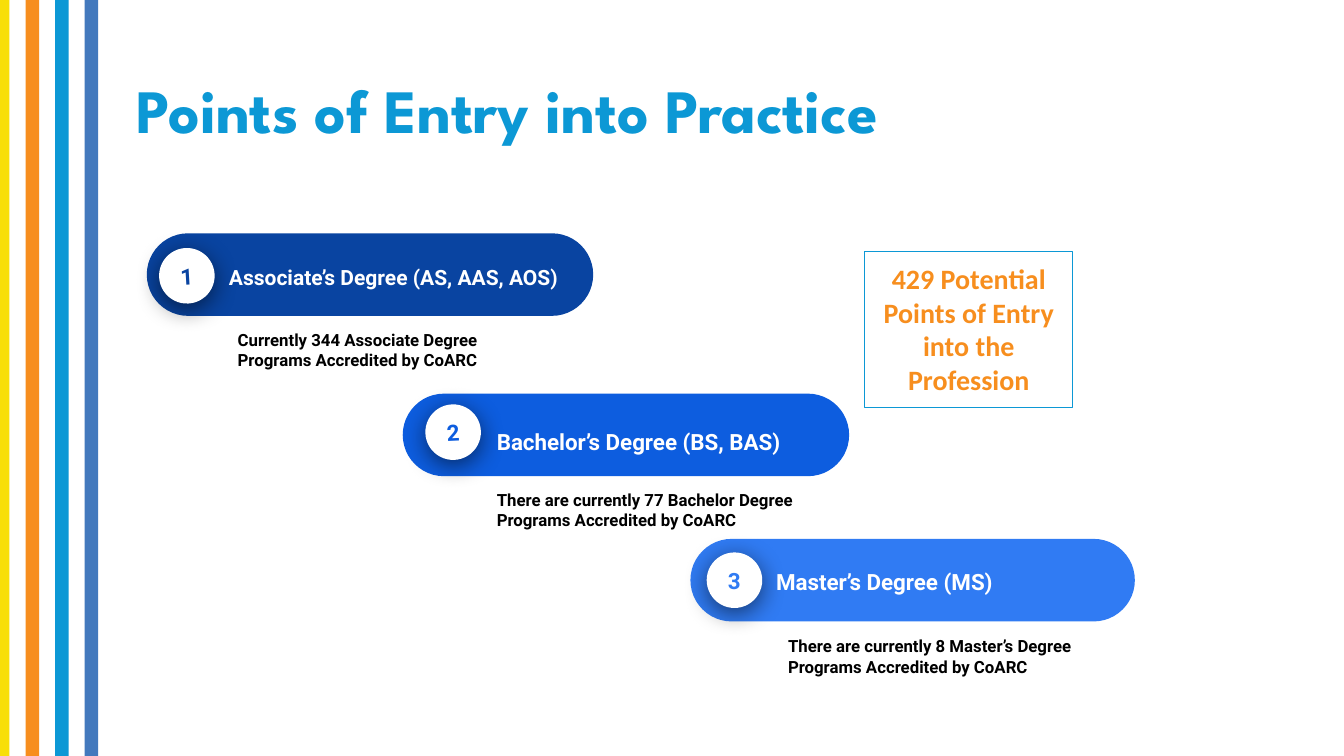
"""Build the slide on points of entry into practice."""
from lxml import etree
from pptx import Presentation
from pptx.dml.color import RGBColor
from pptx.enum.shapes import MSO_SHAPE
from pptx.enum.text import MSO_ANCHOR, PP_ALIGN
from pptx.oxml.ns import qn
from pptx.util import Cm, Pt

RECTANGLE, PILL, CIRCLE = MSO_SHAPE.RECTANGLE, MSO_SHAPE.ROUNDED_RECTANGLE, MSO_SHAPE.OVAL
TOP, MIDDLE = MSO_ANCHOR.TOP, MSO_ANCHOR.MIDDLE
LEFT, CENTER = PP_ALIGN.LEFT, PP_ALIGN.CENTER

COLORS = {
    "yellow": "F8DF08", "orange": "F78E1E", "sky": "0C98D5", "steel": "4379BD",
    "navy": "0944A1", "royal": "0D5DDF", "azure": "307BF3",
    "white": "FFFFFF", "black": "000000",
}
STRIPES = ["yellow", "orange", "sky", "steel"]
DEGREES = [
    {"color": "navy", "pill": (3.7, 5.88, 11.25, 2.08), "badge": (4.01, 6.25, 1.4, 1.4),
     "turn": -3.3, "label": (5.44, 6.2, 9.78, 1.45), "note": (5.66, 7.98, 8.15, 1.88),
     "name": "Associate’s Degree (AS, AAS, AOS)", "size": 15,
     "detail": "Currently 344 Associate Degree Programs Accredited by CoARC"},
    {"color": "royal", "pill": (10.15, 9.92, 11.25, 2.08), "badge": (10.72, 10.19, 1.4, 1.4),
     "turn": -2.6, "label": (12.19, 10.34, 8.64, 1.45), "note": (12.19, 12.01, 8.15, 1.88),
     "name": "Bachelor’s Degree (BS, BAS)", "size": 16,
     "detail": "There are currently 77 Bachelor Degree Programs Accredited by CoARC"},
    {"color": "azure", "pill": (17.4, 13.58, 11.2, 2.08), "badge": (17.81, 13.92, 1.4, 1.4),
     "turn": 0.2, "label": (19.23, 13.89, 8.64, 1.45), "note": (19.53, 15.7, 8.08, 1.88),
     "name": "Master’s Degree (MS)", "size": 16,
     "detail": "There are currently 8 Master’s Degree Programs Accredited by CoARC"},
]


def rgb(color):
    """Return the named colour."""
    return RGBColor.from_string(COLORS[color])


def set_all(target, values):
    """Set each named attribute on the target."""
    for name, value in values.items():
        setattr(target, name, value)


def write(box, text, size, color, font="Roboto", anchor=MIDDLE, align=LEFT,
          spacing=1.0, inset=(0.33, 0.33)):
    """Put one bold paragraph into a box."""
    across, down = map(Cm, inset)
    frame = box.text_frame
    set_all(frame, {"word_wrap": True, "vertical_anchor": anchor,
                    "margin_left": across, "margin_right": across,
                    "margin_top": down, "margin_bottom": down})
    para = frame.paragraphs[0]
    set_all(para, {"alignment": align, "line_spacing": spacing})
    span = para.add_run()
    span.text = text
    set_all(span.font, {"name": font, "size": Pt(size), "bold": True})
    span.font.color.rgb = rgb(color)


def add_shape(shapes, kind, place, fill=None):
    """Add a flat shape without an outline."""
    shape = shapes.add_shape(kind, *map(Cm, place))
    shape.shadow.inherit = False
    shape.line.fill.background()
    if fill:
        shape.fill.solid()
        shape.fill.fore_color.rgb = rgb(fill)
    else:
        shape.fill.background()
    return shape


def add_text(shapes, place, *content, **style):
    """Add a text box with one paragraph."""
    write(shapes.add_textbox(*map(Cm, place)), *content, **style)


def add_shadow(shape):
    """Give a shape a soft shadow below it."""
    effects = shape._element.spPr.find(qn("a:effectLst"))
    shadow = etree.SubElement(effects, qn("a:outerShdw"), blurRad=str(Pt(18)),
                              dist=str(Pt(4)), dir="5400000", algn="bl", rotWithShape="0")
    tint = etree.SubElement(shadow, qn("a:srgbClr"), val=COLORS["black"])
    etree.SubElement(tint, qn("a:alpha"), val="55000")


def add_degree(page, number, degree):
    """Add a group of pill, numbered badge, label and note."""
    shapes = page.shapes.add_group_shape().shapes
    pill = add_shape(shapes, PILL, degree["pill"], degree["color"])
    pill.adjustments[0] = 0.5
    badge = add_shape(shapes, CIRCLE, degree["badge"], "white")
    badge.rotation = degree["turn"]
    add_shadow(badge)
    write(badge, str(number), 16, degree["color"], align=CENTER)
    add_text(shapes, degree["label"], degree["name"], degree["size"], "white", spacing=1.15)
    add_text(shapes, degree["note"], degree["detail"], 12, "black", anchor=TOP)


def add_total(page):
    """Add the outlined box with the total."""
    total = add_shape(page.shapes, RECTANGLE, (21.79, 6.34, 5.25, 3.94))
    total.line.color.rgb = rgb("sky")
    total.line.width = Pt(0.75)
    write(total, "429 Potential Points of Entry into the Profession", 20, "orange",
          font="Calibri", anchor=TOP, align=CENTER, inset=(0.25, 0.25))


def main():
    """Build and save the deck."""
    deck = Presentation()
    set_all(deck, {"slide_width": Cm(33.87), "slide_height": Cm(19.05)})
    page = deck.slides.add_slide(deck.slide_layouts[6])
    for index, color in enumerate(STRIPES):
        add_shape(page.shapes, RECTANGLE, (-0.1 + 0.745 * index, 0, 0.34, 19.05), color)
    add_text(page.shapes, (3.2, 1.02, 25.35, 3.68), "Points of Entry into Practice", 44, "sky",
             font="League Spartan", spacing=0.9, inset=(0.25, 0.13))
    for number, degree in enumerate(DEGREES, 1):
        add_degree(page, number, degree)
    add_total(page)
    deck.save("out.pptx")


if __name__ == "__main__":
    main()
